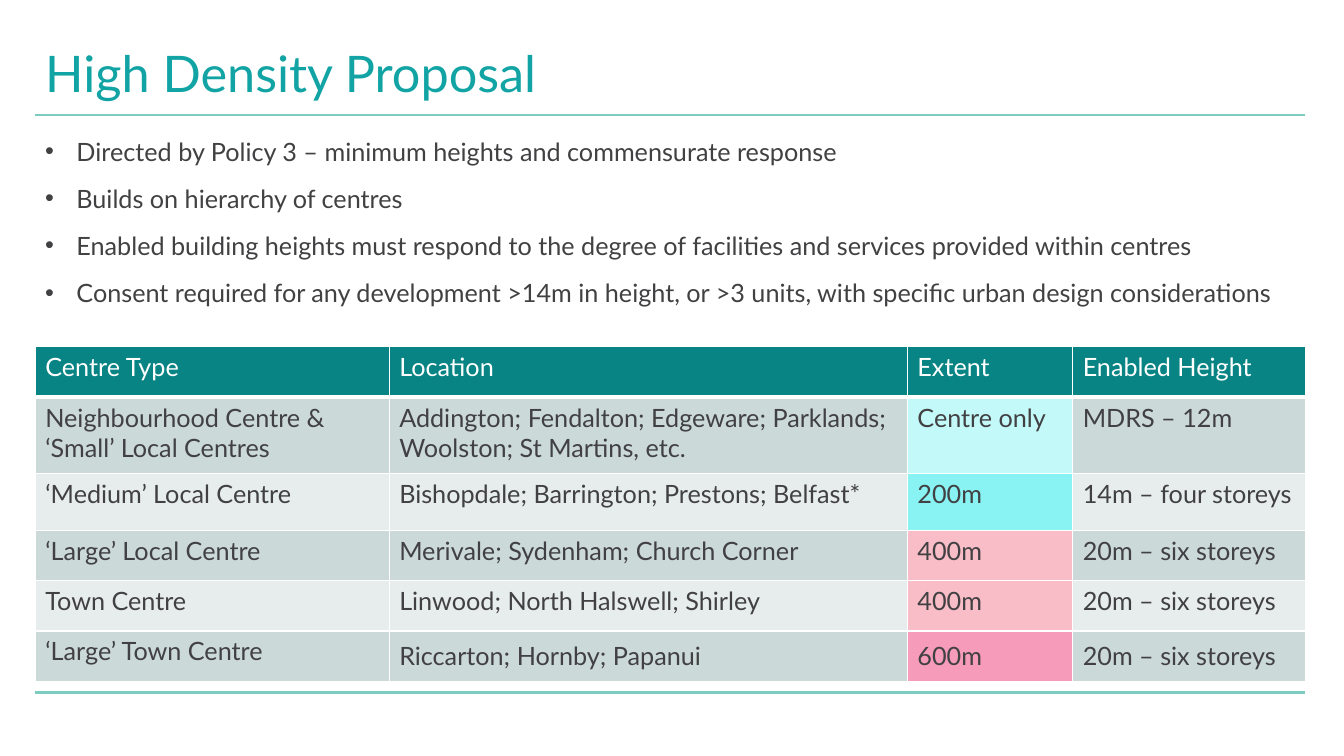
from lxml import etree
from pptx import Presentation
from pptx.dml.color import RGBColor
from pptx.enum.shapes import MSO_CONNECTOR
from pptx.enum.text import MSO_ANCHOR
from pptx.oxml.ns import qn
from pptx.util import Inches, Pt

TITLE = "High Density Proposal"
BULLETS = [
    "Directed by Policy 3 – minimum heights and commensurate response",
    "Builds on hierarchy of centres",
    "Enabled building heights must respond to the degree of facilities and services provided within centres",
    "Consent required for any development >14m in height, or >3 units, with specific urban design considerations",
]
HEADER = ["Centre Type", "Location", "Extent", "Enabled Height"]
CENTRES = [
    ["Neighbourhood Centre &\n‘Small’ Local Centres",
     "Addington; Fendalton; Edgeware; Parklands; Woolston; St Martins, etc.",
     "Centre only", "MDRS – 12m"],
    ["‘Medium’ Local Centre", "Bishopdale; Barrington; Prestons; Belfast*",
     "200m", "14m – four storeys"],
    ["‘Large’ Local Centre", "Merivale; Sydenham; Church Corner",
     "400m", "20m – six storeys"],
    ["Town Centre", "Linwood; North Halswell; Shirley",
     "400m", "20m – six storeys"],
    ["‘Large’ Town Centre", "Riccarton; Hornby; Papanui",
     "600m", "20m – six storeys"],
]
COLUMN_WIDTHS = [3.51, 5.14, 1.64, 2.31]
ROW_HEIGHTS = [0.5, 0.76, 0.56, 0.5, 0.5, 0.5]

FONT = "Lato"
TEAL_TITLE = RGBColor(0x12, 0xA4, 0xA4)
TEAL_HEADER = RGBColor(0x09, 0x84, 0x84)
TEAL_RULE = RGBColor(0x7C, 0xCC, 0xBF)
WHITE = RGBColor(0xFF, 0xFF, 0xFF)
DARK_GREY = RGBColor(0x41, 0x40, 0x42)
BANDS = [RGBColor(0xCC, 0xD9, 0xD9), RGBColor(0xE7, 0xED, 0xED)]
EXTENT_FILLS = {
    "Centre only": RGBColor(0xC4, 0xF9, 0xF9),
    "200m": RGBColor(0x89, 0xF2, 0xF2),
    "400m": RGBColor(0xF9, 0xBD, 0xC7),
    "600m": RGBColor(0xF7, 0x9B, 0xBA),
}
LEFT = Inches(0.35)
RULE_RIGHT = Inches(12.94)
RULE_TOPS = [1.14, 6.87]
CONTENT_WIDTH = Inches(12.6)
EXTENT_COLUMN = HEADER.index("Extent")
STRAIGHT = MSO_CONNECTOR.STRAIGHT
MIDDLE = MSO_ANCHOR.MIDDLE


def add_text(paragraph, text, size, color):
    run = paragraph.add_run()
    run.text = text
    run.font.name = FONT
    run.font.size = Pt(size)
    run.font.bold = False
    run.font.color.rgb = color


def add_rule(slide, top):
    rule = slide.shapes.add_connector(STRAIGHT, LEFT, Inches(top), RULE_RIGHT, Inches(top))
    rule.line.color.rgb = TEAL_RULE
    rule.line.width = Pt(1.5)
    etree.SubElement(rule._element.spPr, qn("a:effectLst"))


def add_title(slide):
    box = slide.shapes.add_textbox(LEFT, Inches(0.4), CONTENT_WIDTH, Inches(0.72))
    frame = box.text_frame
    frame.word_wrap = True
    frame.vertical_anchor = MIDDLE
    frame.paragraphs[0].line_spacing = 0.9
    add_text(frame.paragraphs[0], TITLE, 36, TEAL_TITLE)


def add_bullets(slide):
    box = slide.shapes.add_textbox(LEFT, Inches(1.3), Inches(12.52), Inches(1.82))
    frame = box.text_frame
    frame.word_wrap = True
    for index, text in enumerate(BULLETS):
        paragraph = frame.add_paragraph() if index else frame.paragraphs[0]
        paragraph.space_before = Pt(6 if index else 0)
        paragraph.space_after = Pt(6)
        properties = paragraph._p.get_or_add_pPr()
        properties.set("marL", str(Inches(0.31)))
        properties.set("indent", str(-Inches(0.31)))
        etree.SubElement(properties, qn("a:buFont"), typeface="Arial")
        etree.SubElement(properties, qn("a:buChar"), char="•")
        add_text(paragraph, text, 18, DARK_GREY)


def set_borders(cell, bottom_width):
    """Draw white lines on all four sides; call before the cell gets its fill."""
    properties = cell._tc.get_or_add_tcPr()
    widths = {"a:lnL": 1, "a:lnR": 1, "a:lnT": 1, "a:lnB": bottom_width}
    for tag, width in widths.items():
        line = etree.SubElement(properties, qn(tag), w=str(Pt(width)))
        fill = etree.SubElement(line, qn("a:solidFill"))
        etree.SubElement(fill, qn("a:srgbClr"), val=str(WHITE))


def cell_fill(row, column, text):
    if row == 0:
        return TEAL_HEADER
    if column == EXTENT_COLUMN:
        return EXTENT_FILLS[text]
    return BANDS[(row - 1) % 2]


def add_centres_table(slide):
    rows = [HEADER] + CENTRES
    table = slide.shapes.add_table(
        len(rows), len(HEADER), LEFT, Inches(3.44), CONTENT_WIDTH, Inches(sum(ROW_HEIGHTS))
    ).table
    for column, width in zip(table.columns, COLUMN_WIDTHS):
        column.width = Inches(width)
    for table_row, height in zip(table.rows, ROW_HEIGHTS):
        table_row.height = Inches(height)
    for row, texts in enumerate(rows):
        for column, text in enumerate(texts):
            cell = table.cell(row, column)
            set_borders(cell, 1 if row else 3)
            cell.fill.solid()
            cell.fill.fore_color.rgb = cell_fill(row, column, text)
            if row == len(rows) - 1 and column > 0:
                cell.vertical_anchor = MIDDLE
            frame = cell.text_frame
            for index, line in enumerate(text.split("\n")):
                paragraph = frame.add_paragraph() if index else frame.paragraphs[0]
                add_text(paragraph, line, 18, DARK_GREY if row else WHITE)


def main():
    presentation = Presentation()
    presentation.slide_width = Inches(13.33)
    presentation.slide_height = Inches(7.5)
    slide = presentation.slides.add_slide(presentation.slide_layouts[6])
    for top in RULE_TOPS:
        add_rule(slide, top)
    add_title(slide)
    add_centres_table(slide)
    add_bullets(slide)
    presentation.save("out.pptx")


if __name__ == "__main__":
    main()
